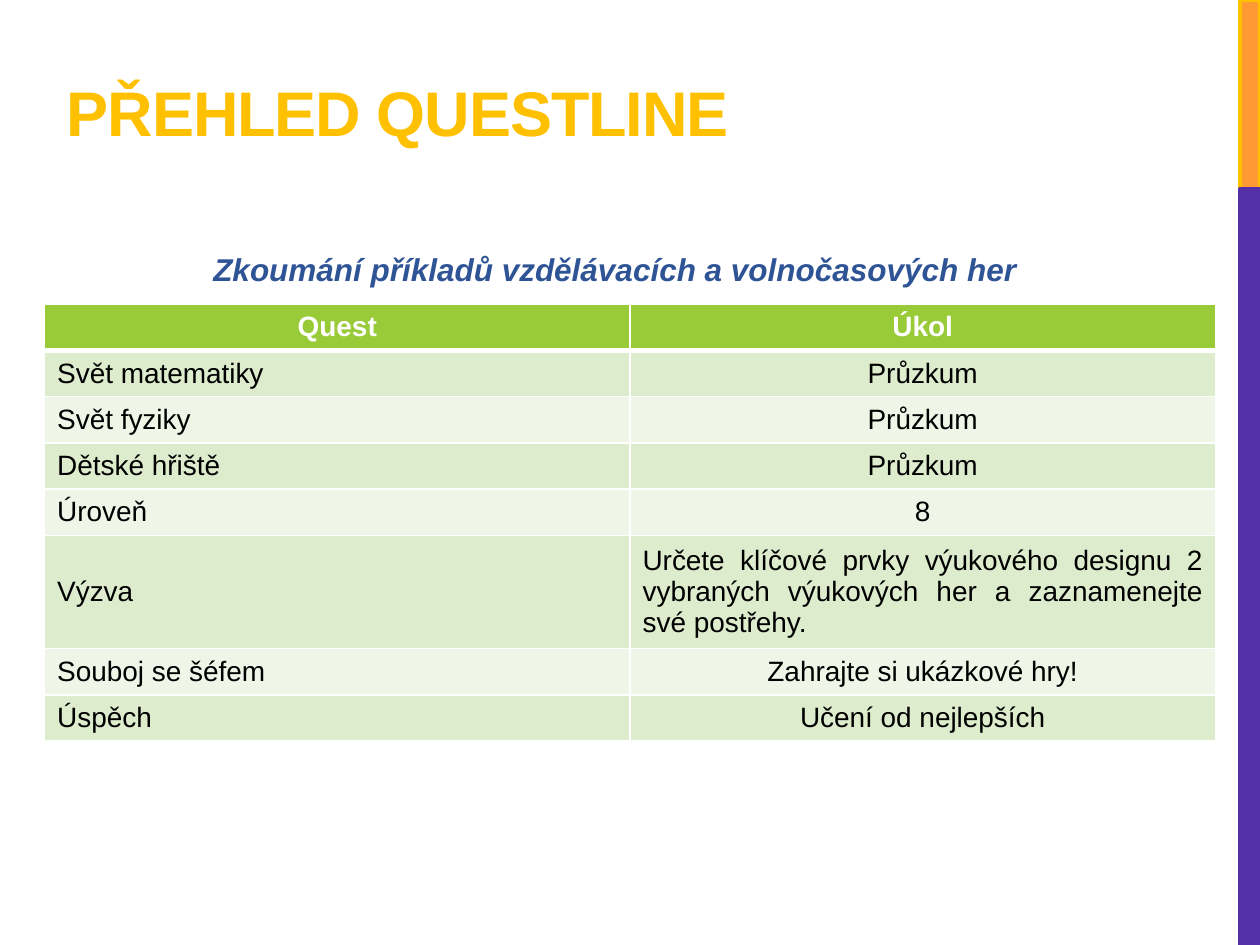
from lxml.etree import SubElement
from pptx import Presentation
from pptx.dml.color import RGBColor
from pptx.enum.shapes import MSO_SHAPE
from pptx.enum.text import MSO_ANCHOR, PP_ALIGN
from pptx.oxml.ns import qn
from pptx.util import Pt

COLORS = {
    "gold": "FFC000", "orange": "FF9933", "purple": "5330A5", "blue": "2F5496",
    "header": "99CB38", "band_dark": "DEECCE", "band_light": "EFF6E8",
    "white": "FFFFFF", "black": "000000",
}

ROWS = [
    ("Quest", "Úkol"),
    ("Svět matematiky", "Průzkum"),
    ("Svět fyziky", "Průzkum"),
    ("Dětské hřiště", "Průzkum"),
    ("Úroveň", "8"),
    ("Výzva", "Určete klíčové prvky výukového designu 2 vybraných výukových her "
              "a zaznamenejte své postřehy."),
    ("Souboj se šéfem", "Zahrajte si ukázkové hry!"),
    ("Úspěch", "Učení od nejlepších"),
]
CHALLENGE_ROW = 5


def rgb(name):
    return RGBColor.from_string(COLORS[name])


def write(tf, text, size=16, color="black", bold=False, italic=False,
          align=PP_ALIGN.LEFT, line_spacing=None, space_after=None, tracking=None):
    """Fill a text frame with one formatted paragraph; tracking is in points."""
    p = tf.paragraphs[0]
    p.alignment = align
    if line_spacing:
        p.line_spacing = line_spacing
    if space_after:
        p.space_after = Pt(space_after)
    r = p.add_run()
    r.text = text
    r.font.name = "Arial"
    r.font.size = Pt(size)
    r.font.bold = bold
    r.font.italic = italic
    r.font.color.rgb = rgb(color)
    if tracking:
        r._r.get_or_add_rPr().set("spc", str(round(tracking * 100)))


def set_border(cell, side, width):
    ln = SubElement(cell._tc.get_or_add_tcPr(), qn(f"a:ln{side}"), w=str(Pt(width)))
    fill = SubElement(ln, qn("a:solidFill"))
    SubElement(fill, qn("a:srgbClr"), val=COLORS["white"])


class SlideBuilder:
    """Holds the slide being built and the table style."""
    thin, thick = 1, 3

    def __init__(self, slide):
        self.slide = slide

    def bar(self, x, y, w, h, fill, line):
        sp = self.slide.shapes.add_shape(MSO_SHAPE.RECTANGLE, Pt(x), Pt(y), Pt(w), Pt(h))
        sp.shadow.inherit = False
        sp.fill.solid()
        sp.fill.fore_color.rgb = rgb(fill)
        sp.line.color.rgb = rgb(line)
        sp.line.width = Pt(2.25)

    def text(self, x, y, w, h, text, anchor=MSO_ANCHOR.TOP, **style):
        tf = self.slide.shapes.add_textbox(Pt(x), Pt(y), Pt(w), Pt(h)).text_frame
        tf.word_wrap = True
        tf.vertical_anchor = anchor
        write(tf, text, **style)

    def table(self, x, y, col_width, heights, rows):
        n_cols = len(rows[0])
        table = self.slide.shapes.add_table(
            len(rows), n_cols, Pt(x), Pt(y), Pt(col_width * n_cols), Pt(sum(heights))).table
        for col in table.columns:
            col.width = Pt(col_width)
        for i, (height, texts) in enumerate(zip(heights, rows)):
            table.rows[i].height = Pt(height)
            for j, text in enumerate(texts):
                self.cell(table.cell(i, j), i, j, text)

    def cell(self, cell, i, j, text):
        header = i == 0
        widths = {"L": self.thin, "R": self.thin,
                  "T": self.thick if i == 1 else self.thin,
                  "B": self.thick if header else self.thin}
        for side, width in widths.items():
            set_border(cell, side, width)
        cell.fill.solid()
        band = "band_dark" if i % 2 else "band_light"
        cell.fill.fore_color.rgb = rgb("header" if header else band)
        cell.vertical_anchor = MSO_ANCHOR.MIDDLE
        if j == 0 and not header:
            align = PP_ALIGN.LEFT
        else:
            align = PP_ALIGN.JUSTIFY if i == CHALLENGE_ROW else PP_ALIGN.CENTER
        write(cell.text_frame, text, bold=header, align=align,
              color="white" if header else "black")


def main():
    prs = Presentation()
    prs.slide_width, prs.slide_height = Pt(720), Pt(540)
    s = SlideBuilder(prs.slides.add_slide(prs.slide_layouts[6]))

    s.bar(708.5, 0, 11.5, 108, "orange", "gold")
    s.bar(708.5, 108, 11.5, 432, "purple", "purple")
    s.text(31, -19.5, 456, 108, "PŘEHLED QUESTLINE", anchor=MSO_ANCHOR.BOTTOM,
           size=36, color="gold", bold=True, tracking=-0.6)
    s.text(51, 128.5, 601, 36.5, "Zkoumání příkladů vzdělávacích a volnočasových her",
           size=18, color="blue", bold=True, italic=True, align=PP_ALIGN.CENTER,
           line_spacing=1.5, space_after=6)
    heights = [64.5 if i == CHALLENGE_ROW else 26.4 for i in range(len(ROWS))]
    s.table(25.5, 173.8, 334.5, heights, ROWS)

    prs.save("out.pptx")


if __name__ == "__main__":
    main()
